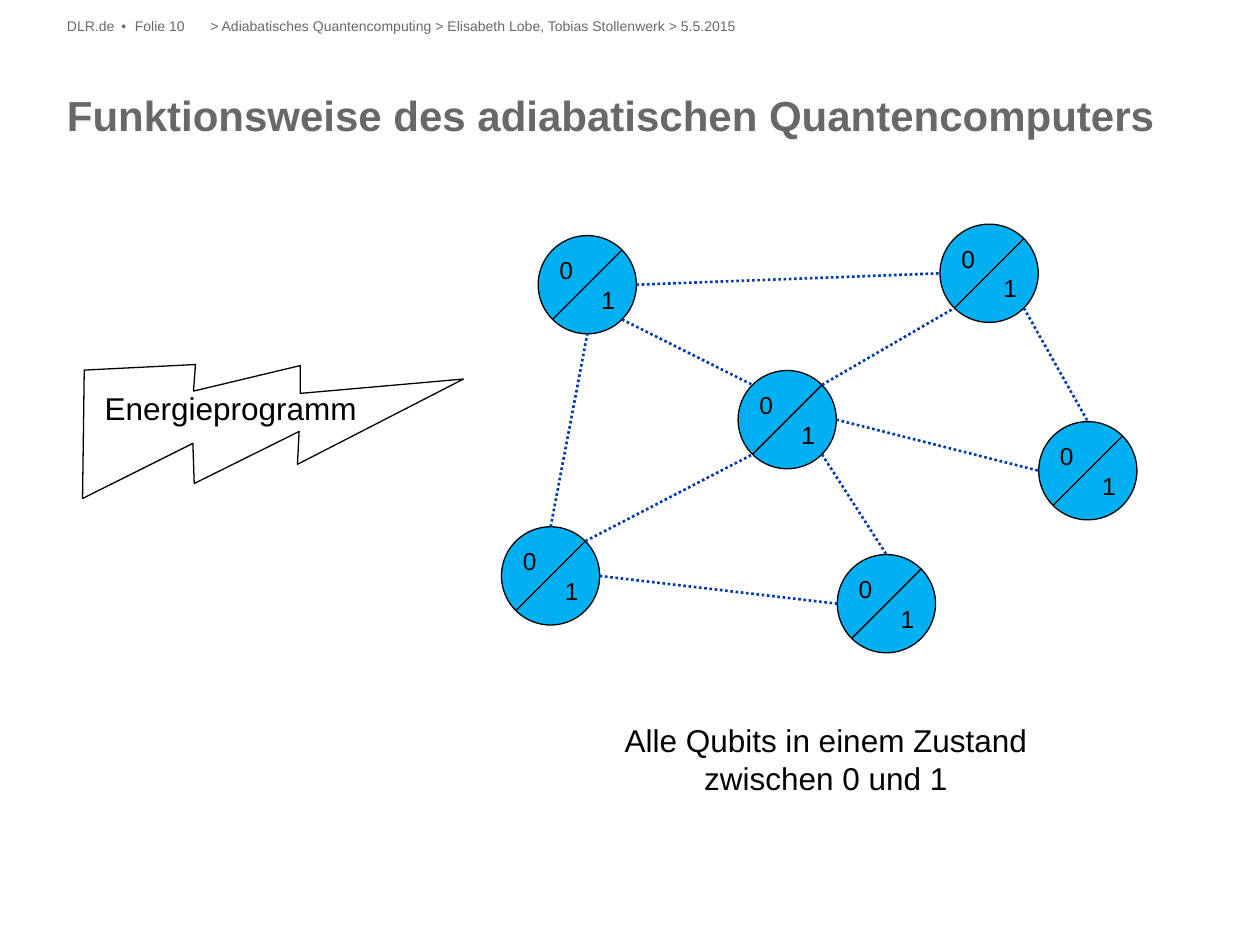
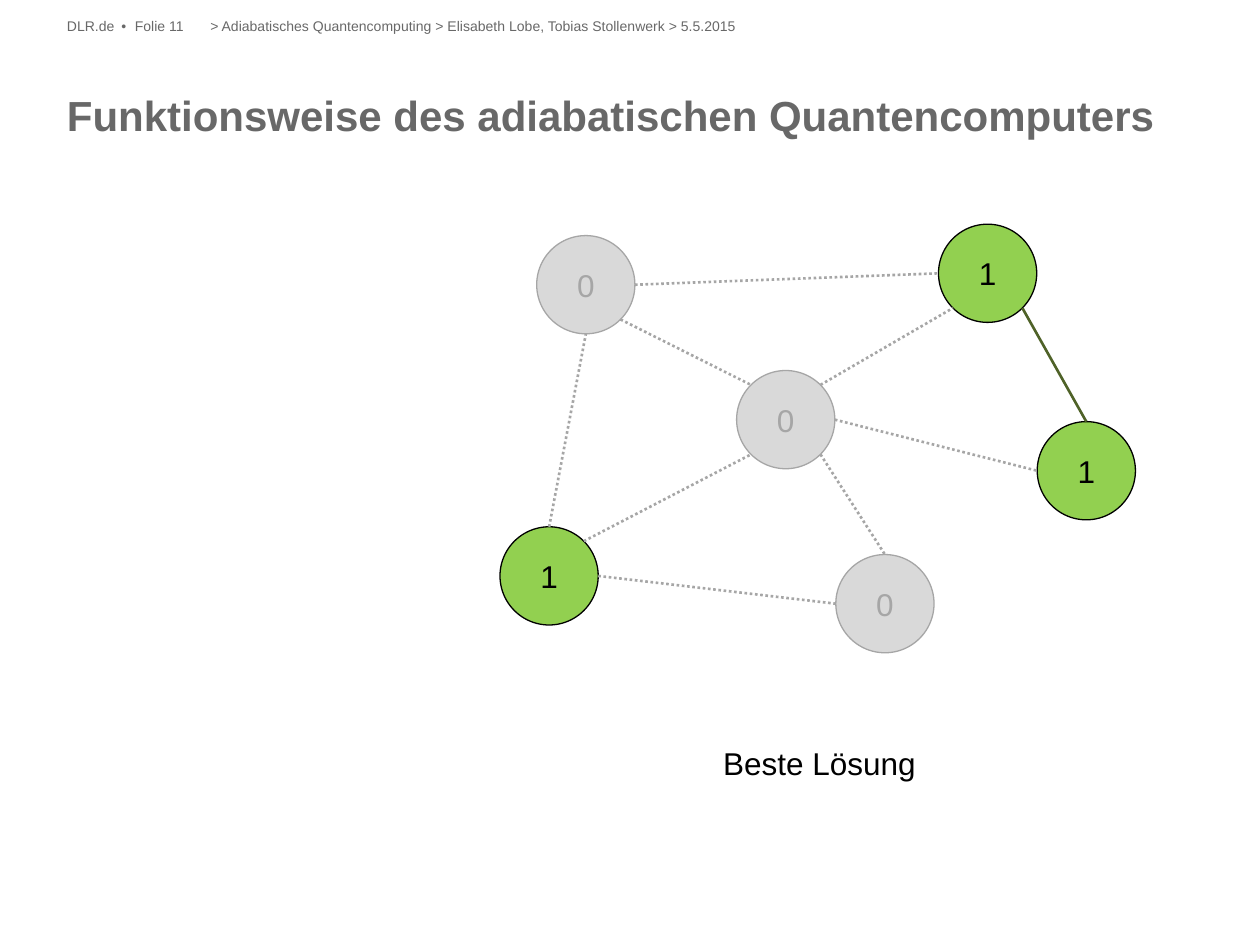
import math
from dataclasses import dataclass

import pptx
import pptx.dml.color
import pptx.enum.dml
import pptx.enum.shapes
import pptx.enum.text
import pptx.oxml.xmlchemy
import pptx.shapes.autoshape
import pptx.shapes.shapetree
import pptx.slide
import pptx.text.text
import pptx.util

Cm = pptx.util.Cm
Align = pptx.enum.text.PP_ALIGN
Anchor = pptx.enum.text.MSO_ANCHOR
Preset = pptx.enum.shapes.MSO_SHAPE

FONT = "Arial"
GREY_TEXT = "686868"
BLACK = "000000"
FADED = "A6A6A6"
QUBIT_DIAMETER = 1.98
CAPTION_WIDTH = 12.88
TITLE = "Funktionsweise des adiabatischen Quantencomputers"
TALK = "> Adiabatisches Quantencomputing > Elisabeth Lobe, Tobias Stollenwerk > 5.5.2015"


@dataclass(frozen=True)
class Box:
    left: float
    top: float
    width: float
    height: float

    def lengths(self) -> tuple[int, int, int, int]:
        return Cm(self.left), Cm(self.top), Cm(self.width), Cm(self.height)


@dataclass(frozen=True)
class Line:
    text: str
    align: Align = Align.LEFT


@dataclass(frozen=True)
class Qubit:
    x: float
    y: float
    solution: str

    def rim(self, angle: float, shift: float) -> tuple[float, float]:
        radius = QUBIT_DIAMETER / 2
        radians = math.radians(angle)
        return (self.x + shift + radius * math.cos(radians),
                self.y - radius * math.sin(radians))


@dataclass(frozen=True)
class Coupling:
    start: str
    start_angle: float
    end: str
    end_angle: float


@dataclass(frozen=True)
class Look:
    fill: str
    ink: str


SUPERPOSED = Look("00B0F0", BLACK)
SOLUTION_LOOKS = {"0": Look("D9D9D9", FADED), "1": Look("92D050", BLACK)}

QUBITS = {
    "upper left": Qubit(11.84, 5.74, "0"),
    "upper right": Qubit(19.94, 5.51, "1"),
    "centre": Qubit(15.87, 8.46, "0"),
    "lower left": Qubit(11.1, 11.61, "1"),
    "lower right": Qubit(17.87, 12.17, "0"),
    "far right": Qubit(21.93, 9.49, "1"),
}

COUPLINGS = (
    Coupling("upper left", 0, "upper right", 180),
    Coupling("centre", 45, "upper right", 225),
    Coupling("upper left", 315, "centre", 135),
    Coupling("upper right", 315, "far right", 90),
    Coupling("lower left", 90, "upper left", 270),
    Coupling("lower left", 45, "centre", 225),
    Coupling("lower left", 0, "lower right", 180),
    Coupling("centre", 315, "lower right", 90),
    Coupling("centre", 0, "far right", 180),
)


def rgb(color: str) -> pptx.dml.color.RGBColor:
    return pptx.dml.color.RGBColor.from_string(color)


def write(frame: pptx.text.text.TextFrame, lines: tuple[Line, ...], size: float,
          color: str = BLACK, bold: bool = False, side_inset: float = 0,
          anchor: Anchor = Anchor.TOP, wrap: bool = True) -> None:
    frame.auto_size = pptx.enum.text.MSO_AUTO_SIZE.NONE
    frame.word_wrap = wrap
    frame.vertical_anchor = anchor
    frame.margin_left = frame.margin_right = Cm(side_inset)
    frame.margin_top = frame.margin_bottom = 0
    for index, line in enumerate(lines):
        paragraph = frame.add_paragraph() if index else frame.paragraphs[0]
        paragraph.alignment = line.align
        run = paragraph.add_run()
        run.text = line.text
        run.font.name = FONT
        run.font.size = pptx.util.Pt(size)
        run.font.bold = bold
        run.font.color.rgb = rgb(color)


def set_tabs(paragraph, positions: tuple[float, ...]) -> None:
    properties = paragraph._p.get_or_add_pPr()
    tabs = pptx.oxml.xmlchemy.OxmlElement("a:tabLst")
    for position in positions:
        tab = pptx.oxml.xmlchemy.OxmlElement("a:tab")
        tab.set("pos", str(int(Cm(position))))
        tab.set("algn", "l")
        tabs.append(tab)
    properties.append(tabs)


def add_preset(shapes: pptx.shapes.shapetree.GroupShapes, preset: Preset, box: Box,
               fill: str | None, outline: str) -> pptx.shapes.autoshape.Shape:
    shape = shapes.add_shape(preset, *box.lengths())
    shape.shadow.inherit = False
    if fill:
        shape.fill.solid()
        shape.fill.fore_color.rgb = rgb(fill)
    else:
        shape.fill.background()
    shape.line.color.rgb = rgb(outline)
    shape.line.width = pptx.util.Pt(0.75)
    return shape


def add_line(shapes: pptx.shapes.shapetree.GroupShapes, start: tuple[float, float],
             end: tuple[float, float], color: str, width: float,
             dotted: bool = False) -> None:
    connector = shapes.add_connector(
        pptx.enum.shapes.MSO_CONNECTOR.STRAIGHT,
        *(Cm(value) for value in start + end))
    connector.line.color.rgb = rgb(color)
    connector.line.width = pptx.util.Pt(width)
    if dotted:
        connector.line.dash_style = pptx.enum.dml.MSO_LINE.ROUND_DOT
    connector._element.spPr.append(pptx.oxml.xmlchemy.OxmlElement("a:effectLst"))


def add_qubit(shapes: pptx.shapes.shapetree.GroupShapes, qubit: Qubit, shift: float,
              solved: bool) -> None:
    radius = QUBIT_DIAMETER / 2
    look = SOLUTION_LOOKS[qubit.solution] if solved else SUPERPOSED
    box = Box(qubit.x + shift - radius, qubit.y - radius, QUBIT_DIAMETER, QUBIT_DIAMETER)
    circle = add_preset(shapes, Preset.OVAL, box, look.fill, look.ink)
    if solved:
        write(circle.text_frame, (Line(qubit.solution, Align.CENTER),), 18, look.ink,
              anchor=Anchor.MIDDLE)
    else:
        write(circle.text_frame, (Line("0"), Line("1", Align.RIGHT)), 14, look.ink,
              side_inset=0.14, anchor=Anchor.MIDDLE)
        add_line(shapes, qubit.rim(45, shift), qubit.rim(225, shift), BLACK, 0.75)


def add_network(slide: pptx.slide.Slide, shift: float, solved: bool,
                caption: tuple[str, ...], caption_left: float, caption_top: float) -> None:
    shapes = slide.shapes.add_group_shape().shapes
    for qubit in QUBITS.values():
        add_qubit(shapes, qubit, shift, solved)
    for coupling in COUPLINGS:
        start, end = QUBITS[coupling.start], QUBITS[coupling.end]
        active = solved and start.solution == end.solution == "1"
        color = "4F6228" if active else FADED if solved else "0039AC"
        add_line(shapes, start.rim(coupling.start_angle, shift),
                 end.rim(coupling.end_angle, shift), color, 1.5, dotted=not active)
    box = Box(caption_left, caption_top, CAPTION_WIDTH, 1.09 * len(caption))
    write(shapes.add_textbox(*box.lengths()).text_frame,
          tuple(Line(text, Align.CENTER) for text in caption), 18)


def add_energy_programme(slide: pptx.slide.Slide) -> None:
    shapes = slide.shapes.add_group_shape().shapes
    bolt = add_preset(shapes, Preset.LIGHTNING_BOLT, Box(2.06, 5.16, 5.82, 6.78), None, BLACK)
    bolt.rotation = 298.9
    label = shapes.add_textbox(*Box(2.11, 7.85, 5.13, 0.77).lengths())
    write(label.text_frame, (Line("Energieprogramm"),), 18, wrap=False)


def add_titled_slide(presentation, number: int) -> pptx.slide.Slide:
    slide = presentation.slides.add_slide(presentation.slide_layouts[5])
    title = slide.shapes.title
    title.left, title.top, title.width, title.height = Box(1.35, 1.8, 22.71, 2.06).lengths()
    write(title.text_frame, (Line(TITLE),), 24, GREY_TEXT, bold=True)

    talk = slide.shapes.add_textbox(*Box(4.24, 0.36, 19.81, 0.41).lengths())
    write(talk.text_frame, (Line(TALK),), 8, GREY_TEXT)

    folio = slide.shapes.add_textbox(*Box(1.35, 0.36, 2.9, 0.41).lengths())
    write(folio.text_frame, (Line(f"DLR.de\t•\tFolie {number}"),), 8, GREY_TEXT)
    set_tabs(folio.text_frame.paragraphs[0], (1.1, 1.37))
    return slide


def main() -> None:
    presentation = pptx.Presentation()
    presentation.slide_width = Cm(25.4)
    presentation.slide_height = Cm(19.05)

    superposition = add_titled_slide(presentation, 10)
    add_network(superposition, 0, False,
                ("Alle Qubits in einem Zustand", "zwischen 0 und 1"), 10.21, 14.53)
    add_energy_programme(superposition)

    best_solution = add_titled_slide(presentation, 11)
    add_network(best_solution, -0.03, True, ("Beste Lösung",), 10.08, 14.99)

    presentation.save("out.pptx")


if __name__ == "__main__":
    main()
